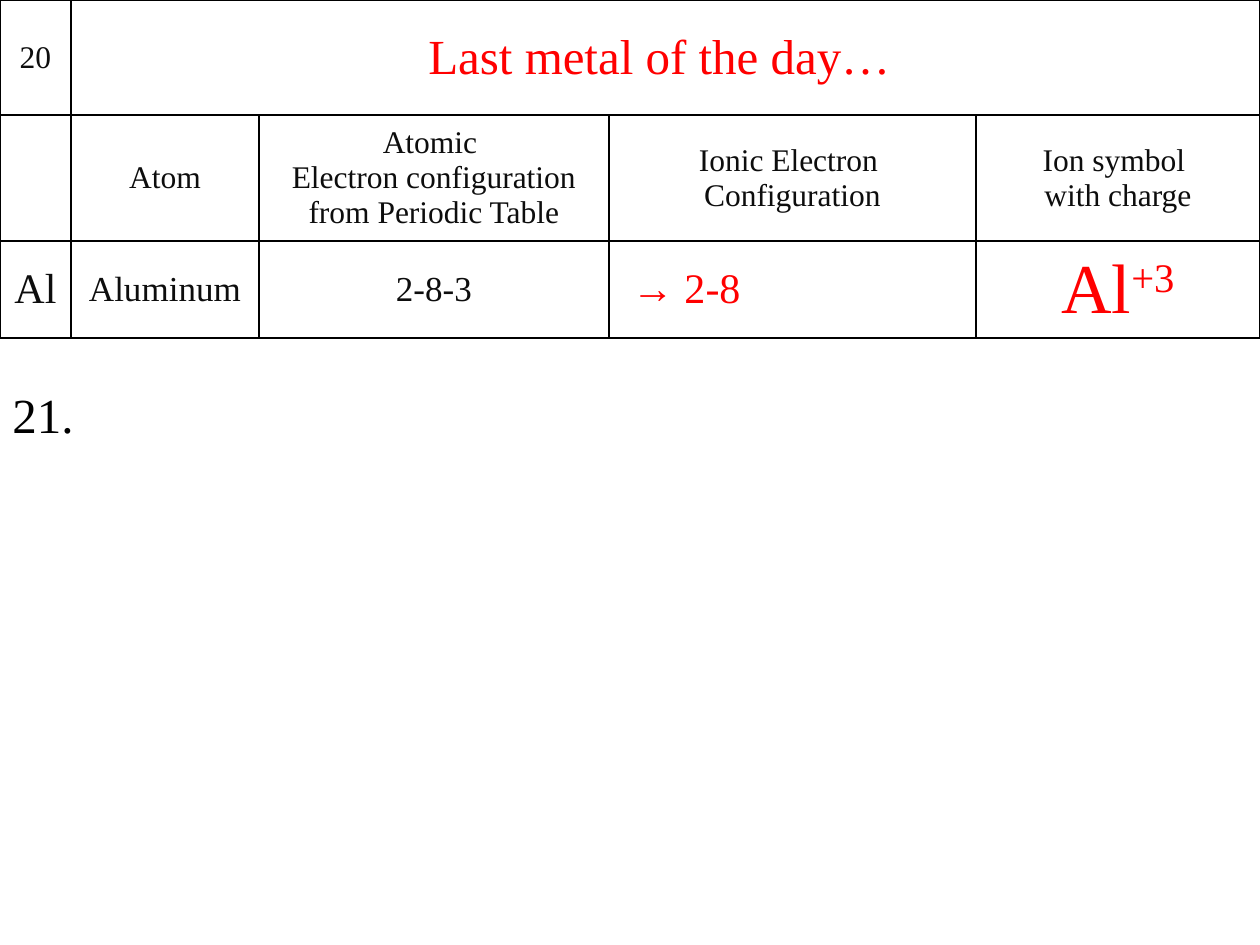
import pptx
import pptx.dml.color
import pptx.enum.text
import pptx.oxml
import pptx.oxml.ns
import pptx.util

PX = 914400 / 126
INK, RED, BLACK = "0D0D0D", "FF0000", "000000"
ALIGN = pptx.enum.text.PP_ALIGN
MIDDLE = pptx.enum.text.MSO_ANCHOR.MIDDLE


def emu(px):
    return pptx.util.Emu(round(px * PX))


def rgb(value):
    return pptx.dml.color.RGBColor.from_string(value)


class SlideBuilder:
    """Holds the text style and the current slide."""

    font = "Times New Roman"

    def __init__(self, prs):
        self.slide = prs.slides.add_slide(prs.slide_layouts[6])

    def run(self, p, text, size, color=INK, baseline=None):
        for i, line in enumerate(text.split("\n")):
            if i:
                p.add_line_break()
            r = p.add_run()
            r.text = line
            style = {"name": self.font, "size": pptx.util.Pt(size)}
            for name, value in style.items():
                setattr(r.font, name, value)
            r.font.color.rgb = rgb(color)
            if baseline:
                r.font._element.set("baseline", str(baseline * 1000))

    def border(self, cell, color=BLACK, width=1):
        tc_pr = cell._tc.get_or_add_tcPr()
        for side in "LRTB":
            tc_pr.append(pptx.oxml.parse_xml(
                f'<a:ln{side} {pptx.oxml.ns.nsdecls("a")} w="{width * 12700}">'
                f'<a:solidFill><a:srgbClr val="{color}"/></a:solidFill>'
                f'</a:ln{side}>'))

    def table(self, x, y, widths, heights, rows):
        frame = self.slide.shapes.add_table(
            len(heights), len(widths), emu(x), emu(y),
            emu(sum(widths)), emu(sum(heights)))
        table = frame.table
        for name in ("first_row", "horz_banding"):
            setattr(table, name, False)
        for column, width in zip(table.columns, widths):
            column.width = emu(width)
        for row, height in zip(table.rows, heights):
            row.height = emu(height)
        for cell in table.iter_cells():
            self.border(cell)
            cell.fill.background()
        for i, row in enumerate(rows):
            for j, (align, runs) in enumerate(row):
                cell = table.cell(i, j)
                cell.vertical_anchor = MIDDLE
                p = cell.text_frame.paragraphs[0]
                p.alignment = align
                for r in runs:
                    self.run(p, *r)
        return table

    def text(self, x, y, w, h, text, size, color):
        sp = self.slide.shapes.add_textbox(emu(x), emu(y), emu(w), emu(h))
        tf = sp.text_frame
        tf.word_wrap = True
        self.run(tf.paragraphs[0], text, size, color)


def centered(*runs):
    return ALIGN.CENTER, runs


def main():
    prs = pptx.Presentation()
    prs.slide_width, prs.slide_height = emu(1260), emu(945)
    s = SlideBuilder(prs)

    # Question, column headings and answer
    headings = ["Atom",
                "Atomic \nElectron configuration\nfrom Periodic Table",
                "Ionic Electron \nConfiguration",
                "Ion symbol \nwith charge"]
    rows = [
        [centered(("20", 18)),
         centered(("Last metal of the day… ", 28, RED))],
        [centered()] + [centered((h, 18)) for h in headings],
        [centered(("Al", 24)),
         centered(("Aluminum", 20)),
         centered(("2-8-3", 20)),
         (ALIGN.LEFT, [(" → 2-8", 24, RED)]),
         centered(("Al", 40, RED), ("+3", 40, RED, 30))],
    ]
    table = s.table(0, 0, [71, 188, 350, 367, 284], [115, 126, 97], rows)
    table.cell(0, 1).merge(table.cell(0, 4))

    # Next question number
    s.text(0, 378, 1260, 170, "21.", 28, BLACK)

    prs.save("out.pptx")


if __name__ == "__main__":
    main()
